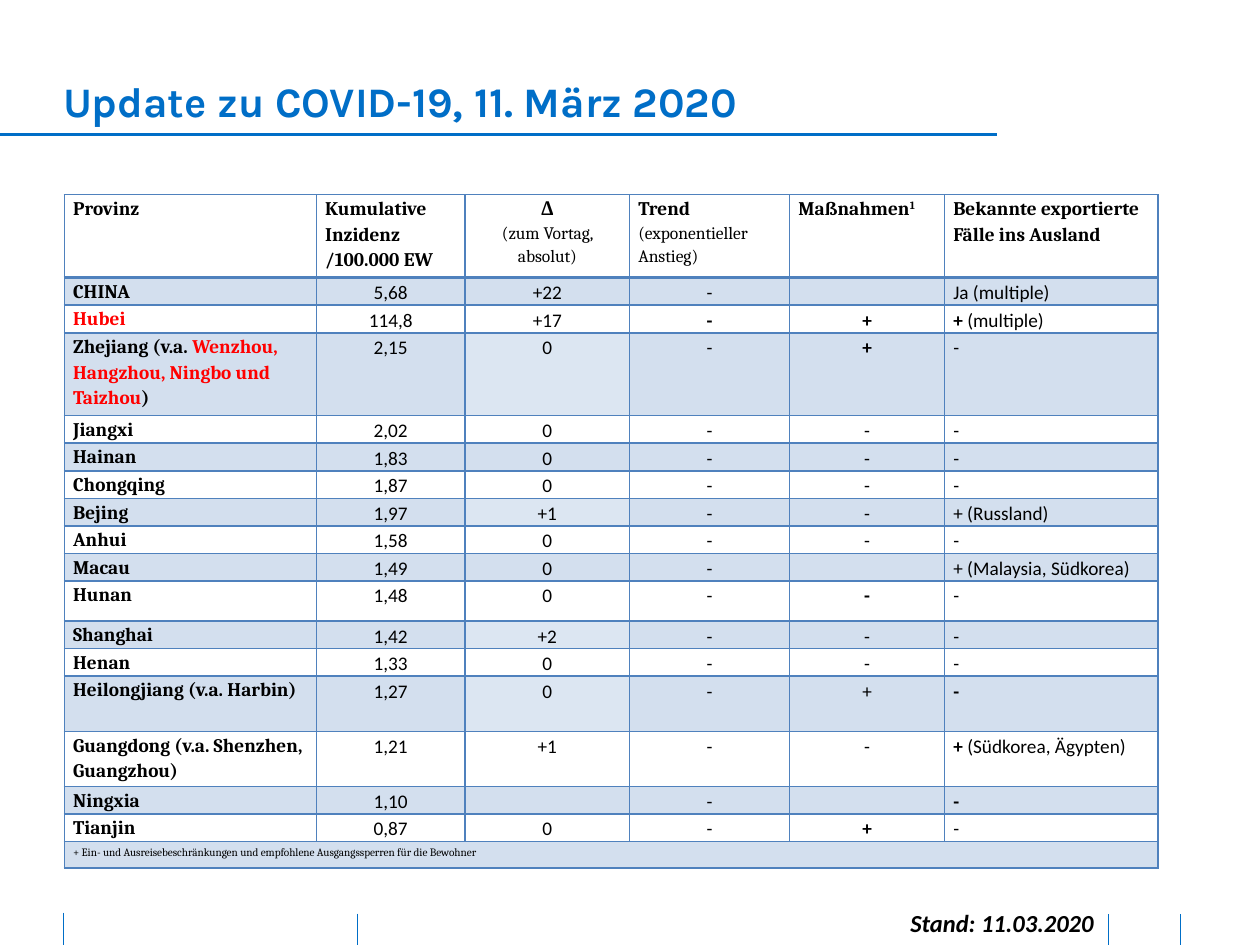
from lxml.etree import SubElement as Sub
from pptx import Presentation
from pptx.dml.color import RGBColor as Rgb
from pptx.enum.shapes import MSO_CONNECTOR as Conn
from pptx.enum.text import MSO_ANCHOR as Anchor, PP_ALIGN as Align
from pptx.oxml.ns import qn
from pptx.util import Pt

HEX = {"blue": "006EC7", "rule": "4F81BD", "band": "D3DFEE", "light": "DCE6F2",
       "white": "FFFFFF", "black": "000000", "red": "FF0000"}

NAME = {"name": "Cambria", "size": Pt(11), "bold": True, "color": "black"}
PLAIN = {"name": "Calibri", "size": Pt(11), "bold": False, "color": "black"}
STYLES = {
    "name": NAME,
    "red": {**NAME, "color": "red"},
    "small": {**NAME, "size": Pt(10), "bold": False},
    "super": {**NAME, "raise": "30000"},
    "note": {**NAME, "bold": False, "raise": "30000"},
    "plain": PLAIN,
    "bold": {**PLAIN, "bold": True},
    "title": {"name": "Karla", "size": Pt(24), "bold": True, "color": "blue"},
    "date": {"name": "Calibri", "size": Pt(14), "bold": True, "italic": True,
             "color": "black"},
}

PLUS, DASH = [("+", "bold")], [("-", "bold")]
HEAD = [
    [[("Provinz", "name")]],
    [[("Kumulative Inzidenz /100.000 EW", "name")]],
    [[("Δ", "name")], [("(zum Vortag, absolut)", "small")]],
    [[("Trend", "name")], [("(exponentieller Anstieg)", "small")]],
    [[("Maßnahmen", "name"), ("1", "super")]],
    [[("Bekannte exportierte Fälle ins Ausland", "name")]],
]
ROWS = [
    ("CHINA", "5,68", "+22", "-", "", "Ja (multiple)"),
    ([("Hubei", "red")], "114,8", "+17", DASH, PLUS, PLUS + [(" (multiple)", "plain")]),
    ([("Zhejiang (v.a. ", "name"), ("Wenzhou, Hangzhou, Ningbo und Taizhou", "red"),
      (")", "name")], "2,15", "0", "-", PLUS, "-"),
    ("Jiangxi", "2,02", "0", "-", "-", "-"),
    ("Hainan", "1,83", "0", "-", "-", "-"),
    ("Chongqing", "1,87", "0", "-", "-", "-"),
    ("Bejing", "1,97", "+1", "-", "-", "+ (Russland)"),
    ("Anhui", "1,58", "0", "-", "-", "-"),
    ("Macau", "1,49", "0", "-", "", "+ (Malaysia, Südkorea)"),
    ("Hunan", "1,48", "0", "-", DASH, "-"),
    ("Shanghai", "1,42", "+2", "-", "-", "-"),
    ("Henan", "1,33", "0", "-", "-", "-"),
    ("Heilongjiang (v.a. Harbin)", "1,27", "0", "-", "+", DASH),
    ("Guangdong (v.a. Shenzhen, Guangzhou)", "1,21", "+1", "-", "-",
     PLUS + [(" (Südkorea, Ägypten)", "plain")]),
    ("Ningxia", "1,10", "", "-", "", DASH),
    ("Tianjin", "0,87", "0", "-", "+", "-"),
]
ROWS[-1] = ROWS[-1][:4] + (PLUS, "-")
NOTE = "+ Ein- und Ausreisebeschränkungen und empfohlene Ausgangssperren für die Bewohner"
WIDTHS = [144, 85, 94, 91.5, 88.5, 122]
TALL = {0: 47.4, 3: 47.4, 10: 23, 13: 31.5, 14: 31.5, 17: 15}
LIGHT = {3, 7, 11, 13}


def add_run(para, text, style):
    """Add one run in a named style."""
    run = para.add_run()
    run.text = text
    for key, val in STYLES[style].items():
        if key == "color":
            run.font.color.rgb = Rgb.from_string(HEX[val])
        elif key == "raise":
            run._r.get_or_add_rPr().set("baseline", val)
        else:
            setattr(run.font, key, val)


def add_line(slide, x1, y1, x2, y2, width):
    """Draw a straight blue line."""
    line = slide.shapes.add_connector(Conn.STRAIGHT, Pt(x1), Pt(y1), Pt(x2), Pt(y2))
    line.line.color.rgb = Rgb.from_string(HEX["blue"])
    line.line.width = Pt(width)
    Sub(line._element.spPr, qn("a:effectLst"))


def set_edges(cell, top, base):
    """Rule the four sides of a cell."""
    props = cell._tc.get_or_add_tcPr()
    for side, width in (("L", 1), ("R", 1), ("T", top), ("B", base)):
        edge = Sub(props, qn(f"a:ln{side}"), w=str(Pt(width)))
        fill = Sub(edge, qn("a:solidFill"))
        Sub(fill, qn("a:srgbClr"), val=HEX["rule"])


def fill_cell(cell, paras, align, row, tint):
    """Write, rule and tint one table cell."""
    form = {"margin_left": Pt(5), "margin_right": Pt(5),
            "margin_top": 0, "margin_bottom": 0}
    for key, val in form.items():
        setattr(cell, key, val)
    frame = cell.text_frame
    for i, runs in enumerate(paras):
        para = frame.add_paragraph() if i else frame.paragraphs[0]
        para.alignment, para.line_spacing = align, 1.15
        for text, style in runs:
            add_run(para, text, style)
        if not runs:
            Sub(para._p, qn("a:endParaRPr"), sz="1100")
    set_edges(cell, 2.25 if row == 1 else 1, 2.25 if row == 0 else 1)
    cell.fill.solid()
    cell.fill.fore_color.rgb = Rgb.from_string(HEX[tint])


def to_runs(item, col):
    """Turn a plain string into runs in the style of its column."""
    if isinstance(item, str):
        return [(item, "plain" if col else "name")] if item else []
    return item


def add_grid(slide):
    """Build the table of provinces."""
    last = len(ROWS) + 1
    grid = slide.shapes.add_table(last + 1, len(WIDTHS), Pt(36.8), Pt(111.3),
                                  Pt(sum(WIDTHS)), Pt(385)).table
    grid.first_row = grid.horz_banding = False
    for col, width in zip(grid.columns, WIDTHS):
        col.width = Pt(width)
    for i, row in enumerate(grid.rows):
        row.height = Pt(TALL.get(i, 15.75))
    for c, paras in enumerate(HEAD):
        fill_cell(grid.cell(0, c), paras, Align.CENTER if c == 2 else Align.LEFT, 0, "white")
    for r, items in enumerate(ROWS, 1):
        for c, item in enumerate(items):
            tint = "band" if r % 2 else "white"
            if c == 2 and r in LIGHT:
                tint = "light"
            align = Align.CENTER if 0 < c < 5 else Align.LEFT
            fill_cell(grid.cell(r, c), [to_runs(item, c)], align, r, tint)
    grid.cell(last, 0).merge(grid.cell(last, 5))
    for c in range(len(WIDTHS)):
        runs = [] if c else [(NOTE, "note")]
        fill_cell(grid.cell(last, c), [runs], Align.LEFT, last, "band")


def add_title(slide):
    """Place and format the slide title."""
    title = slide.shapes.title
    form = {"left": Pt(36), "top": Pt(43.2), "width": Pt(637), "height": Pt(28.8)}
    for key, val in form.items():
        setattr(title, key, val)
    frame = title.text_frame
    form = {"margin_left": 0, "margin_right": 0, "margin_top": 0,
            "margin_bottom": 0, "vertical_anchor": Anchor.MIDDLE, "word_wrap": True}
    for key, val in form.items():
        setattr(frame, key, val)
    para = frame.paragraphs[0]
    para.alignment = Align.LEFT
    add_run(para, "Update zu COVID-19, 11. März 2020", "title")


def add_date(slide):
    """Add the date of the figures at the foot."""
    box = slide.shapes.add_textbox(Pt(478.8), Pt(515.5), Pt(153.4), Pt(24.5))
    box.text_frame.word_wrap = True
    para = box.text_frame.paragraphs[0]
    para.alignment = Align.RIGHT
    add_run(para, "Stand: 11.03.2020", "date")


def main():
    """Build and save the slide."""
    deck = Presentation()
    deck.slide_width, deck.slide_height = Pt(720), Pt(540)
    slide = deck.slides.add_slide(deck.slide_layouts[5])
    for x, top in ((204.5, 522), (36, 521.5), (674.6, 522.5), (633.6, 522.5)):
        add_line(slide, x, top, x, 540, 0.5)
    add_title(slide)
    add_line(slide, 0, 77, 569.5, 77, 1.5)
    add_date(slide)
    add_grid(slide)
    deck.save("out.pptx")


if __name__ == "__main__":
    main()
